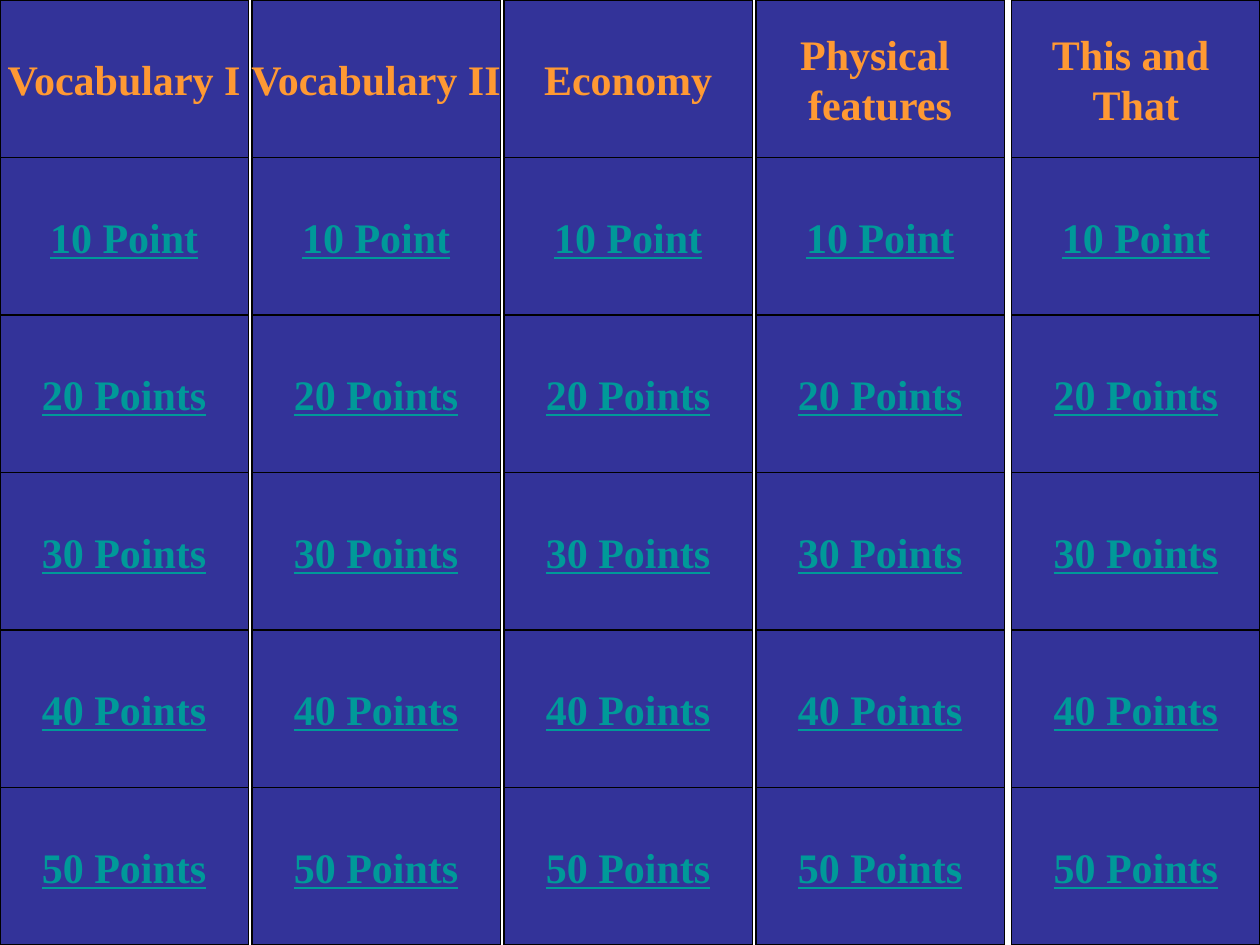
import pptx
import pptx.util
import pptx.dml.color
import pptx.enum.shapes
import pptx.enum.text

PX = 9144  # 100 px to the inch
WIDE, HIGH = 197, 125
LEFTS = [0, 200, 400, 600, 803]
HEADS = ["Vocabulary I", "Vocabulary II", "Economy", "Physical \nfeatures", "This and \nThat"]
POINTS = ["10 Point", "20 Points", "30 Points", "40 Points", "50 Points"]
COLORS = {"tile": "333399", "edge": "000000", "head": "FF9933", "point": "009999"}
FONT = {"name": "Times New Roman", "size": pptx.util.Pt(24), "bold": True}


def color(name):
    return pptx.dml.color.RGBColor.from_string(COLORS[name])


deck = pptx.Presentation()
deck.slide_width, deck.slide_height = 1000 * PX, 750 * PX
slide = deck.slides.add_slide(deck.slide_layouts[6])

for left, head in zip(LEFTS, HEADS):
    for row, text in enumerate([head] + POINTS):
        tile = slide.shapes.add_shape(
            pptx.enum.shapes.MSO_SHAPE.ACTION_BUTTON_CUSTOM,
            left * PX, row * HIGH * PX, WIDE * PX, HIGH * PX)
        tile.shadow.inherit = False
        tile.fill.solid()
        tile.fill.fore_color.rgb = color("tile")
        tile.line.color.rgb = color("edge")
        tile.line.width = pptx.util.Pt(0.75)

        frame = tile.text_frame
        frame.word_wrap = False
        frame.vertical_anchor = pptx.enum.text.MSO_ANCHOR.MIDDLE
        frame.text = text
        for para in frame.paragraphs:
            para.alignment = pptx.enum.text.PP_ALIGN.CENTER
            font = para.runs[0].font
            for key, value in FONT.items():
                setattr(font, key, value)
            font.underline = row > 0
            font.color.rgb = color("point" if row else "head")

deck.save("out.pptx")
